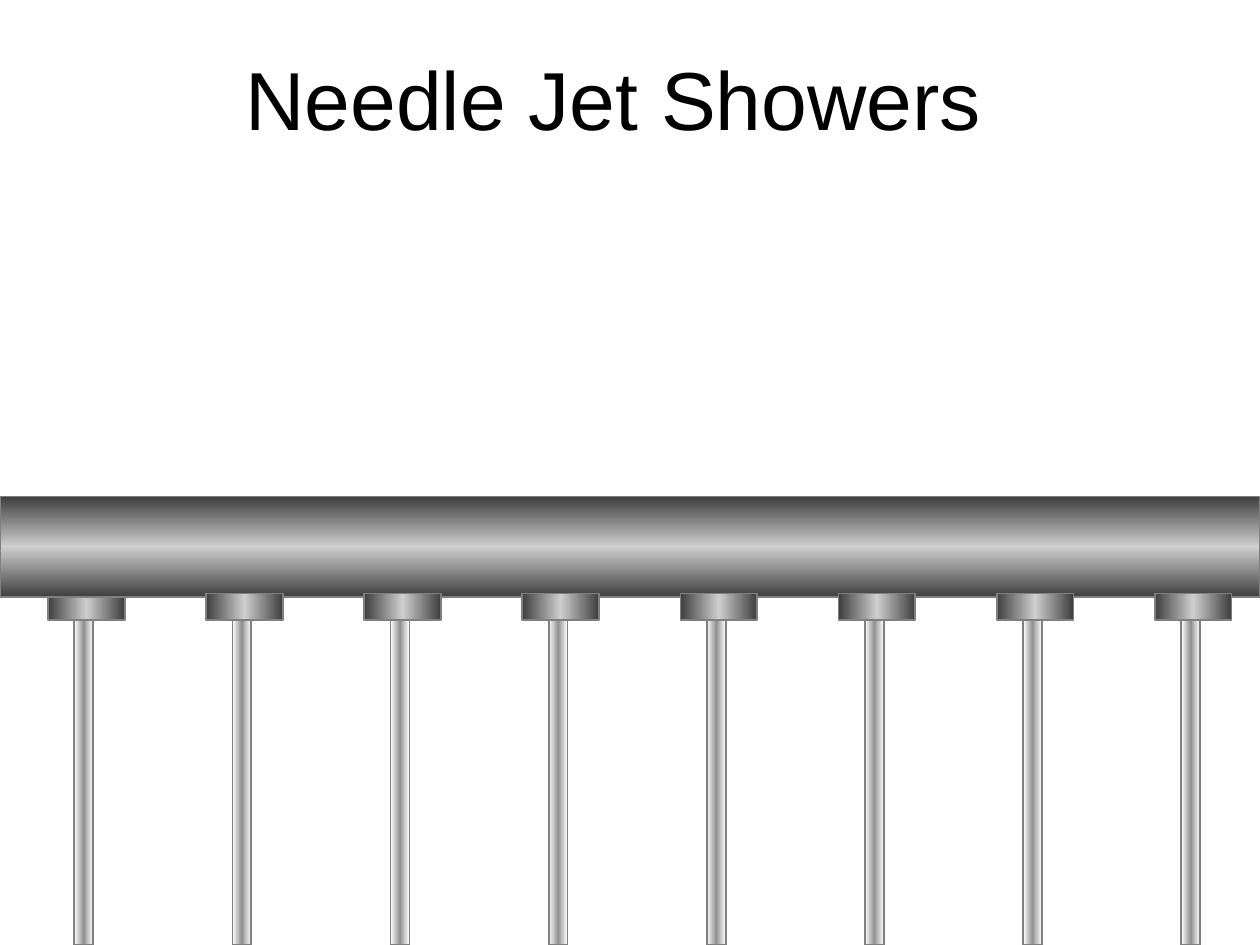
from copy import deepcopy

from pptx import Presentation
from pptx.dml.color import RGBColor
from pptx.enum.shapes import MSO_SHAPE
from pptx.enum.text import MSO_ANCHOR, PP_ALIGN
from pptx.util import Inches, Pt

RECTANGLE = MSO_SHAPE.RECTANGLE
CENTER = PP_ALIGN.CENTER
MIDDLE = MSO_ANCHOR.MIDDLE

BLACK = RGBColor(0x00, 0x00, 0x00)
WHITE = RGBColor(0xFF, 0xFF, 0xFF)
OUTLINE = RGBColor(0x80, 0x80, 0x80)
STEEL_EDGE = RGBColor(0x3E, 0x3E, 0x3E)
STEEL_SHINE = RGBColor(0xCE, 0xCE, 0xCE)
WATER_CORE = RGBColor(0x91, 0x91, 0x91)

JET_COUNT = 8
JET_PITCH = 1.255


def add_title(slide, left, top, width, height):
    title = slide.shapes.title
    title.left, title.top = Inches(left), Inches(top)
    title.width, title.height = Inches(width), Inches(height)
    frame = title.text_frame
    frame.text = "Needle Jet Showers"
    frame.word_wrap = False
    frame.vertical_anchor = MIDDLE
    frame.margin_left = frame.margin_right = Inches(0.08)
    frame.margin_top = frame.margin_bottom = Inches(0.03)
    heading = frame.paragraphs[0]
    heading.alignment = CENTER
    font = heading.runs[0].font
    font.name, font.size = "Arial", Pt(47)
    font.color.rgb = BLACK


def add_tube(shapes, left, top, width, height, edge, middle, angle=0):
    """Rectangle shaded from edge to middle and back to edge."""
    tube = shapes.add_shape(
        RECTANGLE, Inches(left), Inches(top), Inches(width), Inches(height))
    tube.shadow.inherit = False
    tube.line.color.rgb = OUTLINE
    tube.line.width = Pt(1)

    fill = tube.fill
    fill.gradient()
    fill.gradient_angle = angle
    first, last = fill.gradient_stops
    first.position, last.position = 0, 1
    first.color.rgb = last.color.rgb = edge

    # The middle stop is a third one, added to the stop list
    stop_list = tube._element.spPr.gradFill.gsLst
    stop_list.insert(1, deepcopy(stop_list[0]))
    center = fill.gradient_stops[1]
    center.position = 0.5
    center.color.rgb = middle


def add_shower(slide, left, top, width, height):
    """Header pipe with a row of nozzles and jets below it."""
    parts = slide.shapes.add_group_shape().shapes

    def add_jet(index):
        add_tube(parts, left + 0.59 + index * JET_PITCH, top + 0.88,
                 0.15, height - 0.88, WHITE, WATER_CORE)

    def add_nozzle(index):
        add_tube(parts, left + 0.38 + index * JET_PITCH, top + 0.77,
                 0.61, 0.21, STEEL_EDGE, STEEL_SHINE)

    # The first nozzle sits behind the pipe, the others in front
    add_jet(0)
    add_nozzle(0)
    add_tube(parts, left, top, width, 0.8, STEEL_EDGE, STEEL_SHINE, angle=90)
    for index in range(1, JET_COUNT):
        add_jet(index)
        add_nozzle(index)


def main():
    deck = Presentation()
    deck.slide_width, deck.slide_height = Inches(10), Inches(7.5)
    slide = deck.slides.add_slide(deck.slide_layouts[5])
    add_title(slide, 1.71, 0.35, 6.32, 0.85)
    add_shower(slide, 0, 3.94, 10, 3.56)
    deck.save("out.pptx")


if __name__ == "__main__":
    main()
